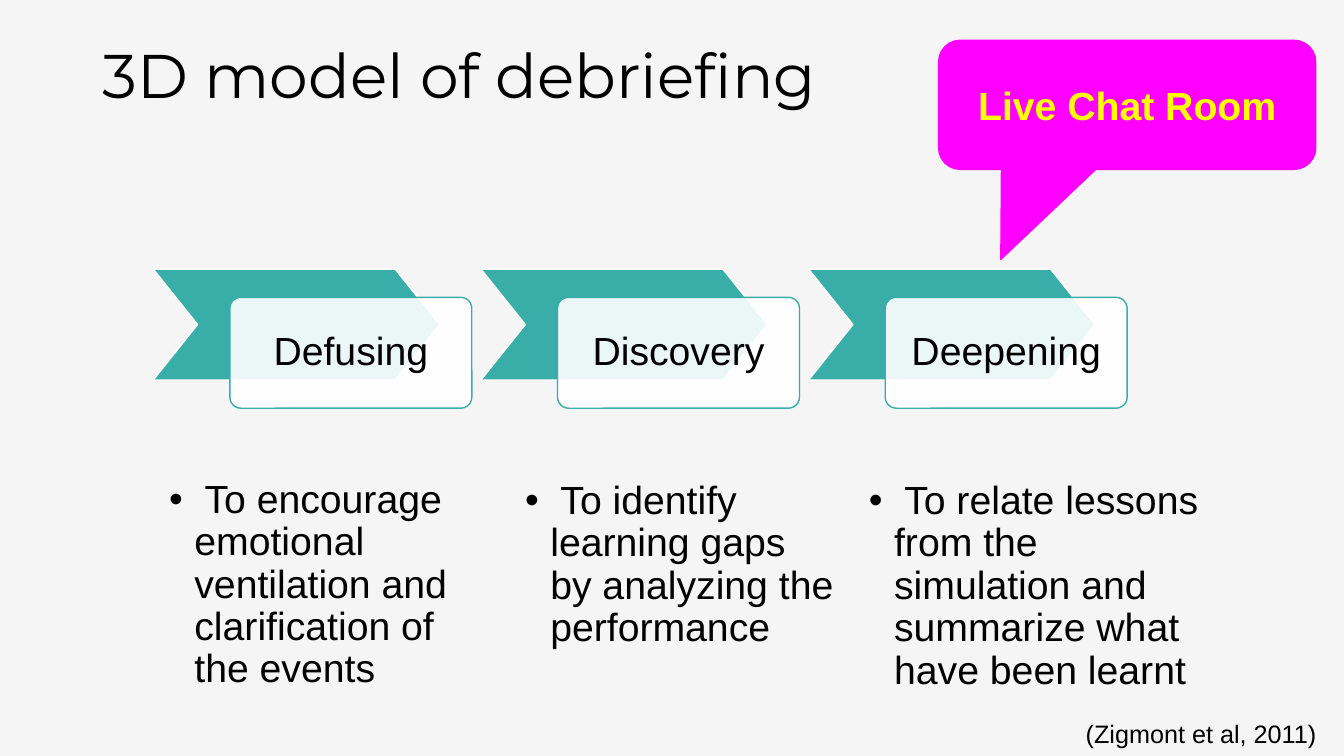
from lxml import etree
from pptx import Presentation
from pptx import util as u
from pptx.dml.color import RGBColor
from pptx.enum import shapes, text
from pptx.oxml.ns import qn

PX = 9144  # 100 px to the inch
TEAL, WHITE, BLACK = "39AEA9", "FFFFFF", "000000"
MAGENTA, YELLOW, GREY = "FF00FF", "FFFF00", "F2F2F2"
SHAPE = shapes.MSO_SHAPE

STAGES = ["Defusing", "Discovery", "Deepening"]
AIMS = [
    (158, 471, 339, " To encourage emotional ventilation and clarification of the events"),
    (511, 472, 327, " To identify learning gaps by analyzing the performance"),
    (852, 472, 353, " To relate lessons from the simulation and summarize what have been learnt"),
]


def px(n):
    return u.Emu(n * PX)


def rgb(color):
    return RGBColor.from_string(color)


def add_shape(s, kind, box, fill, line=None, adj=(), opacity=100):
    sp = s.shapes.add_shape(kind, *map(px, box))
    sp.shadow.inherit = False
    for i, value in enumerate(adj):
        sp.adjustments[i] = value
    sp.fill.solid()
    sp.fill.fore_color.rgb = rgb(fill)
    if opacity < 100:
        color = sp.fill._xPr.find(qn("a:solidFill"))[0]
        etree.SubElement(color, qn("a:alpha"), val=str(opacity * 1000))
    if line:
        sp.line.color.rgb = rgb(line)
        sp.line.width = u.Pt(1)
    else:
        sp.line.fill.background()
    return sp


def write(sp, words, size, color=BLACK, font="Arial", bold=False, spacing=0.9,
          align=text.PP_ALIGN.LEFT, anchor=text.MSO_ANCHOR.TOP, inset=None, bullet=False):
    tf = sp.text_frame
    tf.word_wrap = True
    tf.vertical_anchor = anchor
    if inset is not None:
        tf.margin_left = tf.margin_right = tf.margin_top = tf.margin_bottom = px(inset)
    p = tf.paragraphs[0]
    p.alignment = align
    p.line_spacing = spacing
    if bullet:
        pPr = p._p.get_or_add_pPr()
        pPr.set("marL", str(px(25)))
        pPr.set("indent", str(px(-25)))
        etree.SubElement(pPr, qn("a:buFont"), typeface="Arial")
        etree.SubElement(pPr, qn("a:buChar"), char="•")
    r = p.add_run()
    r.text = words
    r.font.name, r.font.size, r.font.bold = font, u.Pt(size), bold
    r.font.color.rgb = rgb(color)


def add_text(s, box, words, size, **style):
    write(s.shapes.add_textbox(*map(px, box)), words, size, **style)


def add_stage(s, left, top, name):
    """Chevron with a name card overlapping its lower right."""
    add_shape(s, SHAPE.CHEVRON, (left, top, 284, 110), TEAL, WHITE, [0.4])
    card = add_shape(s, SHAPE.ROUNDED_RECTANGLE, (left + 76, top + 28, 240, 110),
                     WHITE, TEAL, [0.1], opacity=90)
    write(card, name, 28, align=text.PP_ALIGN.CENTER,
          anchor=text.MSO_ANCHOR.MIDDLE, inset=22)


def add_stages(s, left, top, pitch):
    for i, name in enumerate(STAGES):
        add_stage(s, left + i * pitch, top, name)


def add_aims(s):
    for left, top, width, words in AIMS:
        add_text(s, (left, top, width, 278), words, 28, bullet=True)


def add_callout(s, box):
    callout = add_shape(s, SHAPE.ROUNDED_RECTANGULAR_CALLOUT, box, MAGENTA, MAGENTA,
                        [-0.335, 1.198, 0.167])
    write(callout, "Live Chat Room", 28, color=YELLOW, bold=True, spacing=1.0,
          align=text.PP_ALIGN.CENTER, anchor=text.MSO_ANCHOR.MIDDLE)


def build_debriefing_slide(prs):
    s = prs.slides.add_slide(prs.slide_layouts[6])
    add_shape(s, SHAPE.RECTANGLE, (0, 0, 1333, 750), GREY, opacity=75)
    add_text(s, (92, 40, 1150, 145), "3D model of debriefing", 44, font="Montserrat")
    add_stages(s, 152, 267, 325)
    add_aims(s)
    add_text(s, (1067, 711, 260, 39), "(Zigmont et al, 2011)", 18)
    add_callout(s, (931, 40, 374, 128))


def main():
    prs = Presentation()
    prs.slide_width, prs.slide_height = px(1333), px(750)
    build_debriefing_slide(prs)
    prs.save("out.pptx")


if __name__ == "__main__":
    main()
